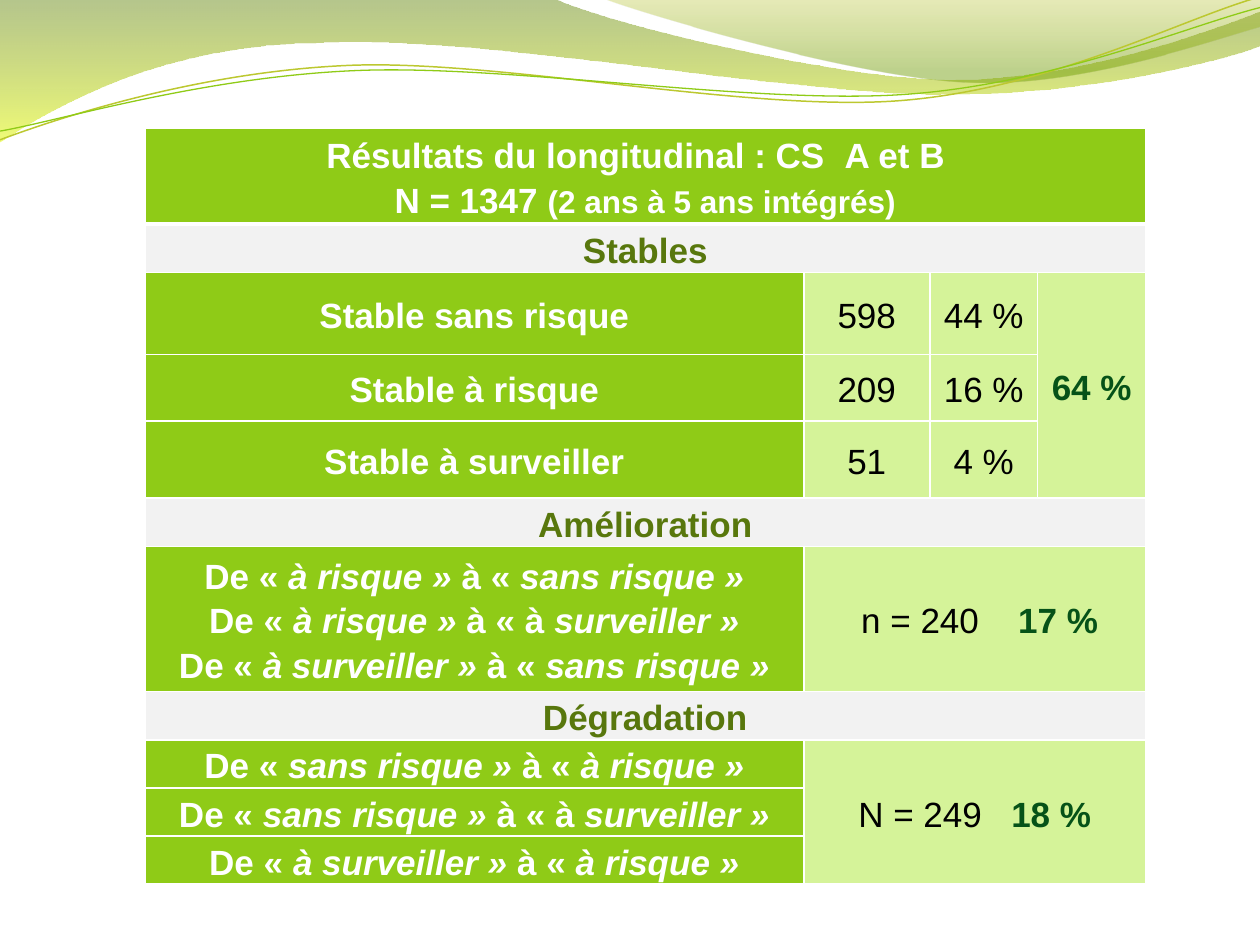
"""Build a slide with a results table under a band of green waves."""
from dataclasses import dataclass
from typing import NamedTuple

import lxml.etree
import pptx
import pptx.dml.color
import pptx.enum.text
import pptx.oxml.ns
import pptx.util

Pt = pptx.util.Pt
RGBColor = pptx.dml.color.RGBColor
qn = pptx.oxml.ns.qn

WHITE = RGBColor(0xFF, 0xFF, 0xFF)
BLACK = RGBColor(0x00, 0x00, 0x00)
GREEN = RGBColor(0x8F, 0xCB, 0x17)
PALE_GREEN = RGBColor(0xD5, 0xF3, 0x99)
DARK_GREEN = RGBColor(0x06, 0x52, 0x18)
OLIVE = RGBColor(0x58, 0x77, 0x0D)
GREY = RGBColor(0xF2, 0xF2, 0xF2)
MOSS = RGBColor(0x5C, 0x80, 0x02)
LEMON = RGBColor(0xE4, 0xF9, 0x06)
MUSTARD = RGBColor(0xAD, 0xBB, 0x15)
LEAF = RGBColor(0x6E, 0x9B, 0x00)
LIME = RGBColor(0xBC, 0xC8, 0x30)

COLUMN_WIDTHS = (376.5, 72, 61.7, 61.7)
ROW_HEIGHTS = (54.7, 27.7, 46.8, 38.2, 43.9, 27.7, 82.8, 27.7, 27.5, 27.5, 27.5)


class Stop(NamedTuple):
    color: RGBColor
    position: float
    opacity: int


@dataclass
class Wave:
    start: tuple
    segments: list
    stops: tuple = ()
    line: RGBColor | None = None
    width: float = 0


@dataclass
class Span:
    text: str
    color: RGBColor = WHITE
    size: float = 20
    bold: bool = True
    italic: bool = False
    spread: float = 0


@dataclass
class Block:
    row: int
    column: int
    lines: list
    fill: RGBColor
    rows: int = 1
    columns: int = 1


WAVES = [
    Wave((0, -0.7), [
        (316.8, -0.7),
        (342.7, 12.2, 478.1, 45.4, 545.8, 45.4),
        (614.2, 45.4, 689.8, 18.7, 720, 6.5),
        (720.7, 25.9),
        (707.8, 31.7, 626.4, 54.7, 537.1, 54),
        (447.8, 54, 275, 20.2, 185, 24.5),
        (92.9, 25.2, 33.1, 59.8, -0.7, 81.4),
        (0, -0.7),
    ], stops=(Stop(MOSS, 0, 45), Stop(LEMON, 1, 55))),
    Wave((344.9, -0.7), [
        (366.5, 7.9, 491, 44.6, 553.7, 46.8),
        (616.3, 49.7, 691.9, 23, 720, 15.1),
        (720, 0),
        (344.9, -0.7),
    ], stops=(Stop(MUSTARD, 0, 30), Stop(LEAF, 0.8, 45))),
    Wave((0, 79.9), [
        (34.6, 67, 113.8, 41, 199.4, 37.4),
        (284.4, 33.8, 427, 64.1, 513.4, 57.6),
        (599.8, 51.1, 675.4, 10.8, 718.6, -1.4),
    ], line=LIME, width=0.85),
    Wave((0, 74.9), [
        (33.8, 69.1, 115.9, 43.9, 203.8, 40.3),
        (290.2, 36.7, 429.8, 59.8, 516.2, 54),
        (601.9, 48.2, 677.5, 15.1, 720, 4.3),
    ], line=GREEN, width=0.75),
]


def heading(row: int, text: str) -> Block:
    """Describe a grey section row."""
    return Block(row, 0, [[Span(text, OLIVE)]], GREY, columns=4)


def change(before: str, link: str, after: str) -> list:
    """Describe a move from one state to another."""
    return [Span("De « "), Span(f"{before} »", italic=True),
            Span(link), Span(f"{after} »", italic=True)]


def total(row: int, count: str, share: str, spread: float, rows: int = 1) -> Block:
    """Describe a section total with its share."""
    line = [Span(count, BLACK, bold=False), Span(" ", BLACK, bold=False, spread=spread),
            Span(share, DARK_GREEN)]
    return Block(row, 1, [line], PALE_GREEN, rows, 3)


def stable(row: int, label: str, count: str, share: str) -> list:
    """Describe a label with its count and share."""
    values = [Block(row, column, [[Span(text, BLACK, bold=False)]], PALE_GREEN)
              for column, text in enumerate((count, share), 1)]
    return [Block(row, 0, [[Span(label)]], GREEN), *values]


TO, TO_A = " à « ", " à « à "
WIDE_SPACE = Span(" ", spread=5.6)
BLOCKS = [
    Block(0, 0, [[Span("Résultats du longitudinal : CS"), WIDE_SPACE, Span("A et B"),
                  WIDE_SPACE, Span("\nN = 1347 "),
                  Span("(2 ans à 5 ans intégrés)", size=18)]], GREEN, columns=4),
    heading(1, "Stables"),
    *stable(2, "Stable sans risque", "598", "44 %"),
    *stable(3, "Stable à risque", "209", "16 %"),
    *stable(4, "Stable à surveiller", "51", "4 %"),
    Block(2, 3, [[Span("64 %", DARK_GREEN)]], PALE_GREEN, rows=3),
    heading(5, "Amélioration"),
    Block(6, 0, [change("à risque", TO, "sans risque"),
                 change("à risque", TO_A, "surveiller"),
                 change("à surveiller", TO, "sans risque")], GREEN),
    total(6, " n = 240", "17 %", 16.7),
    heading(7, "Dégradation"),
    Block(8, 0, [change("sans risque", TO, "à risque")], GREEN),
    Block(9, 0, [change("sans risque", TO_A, "surveiller")], GREEN),
    Block(10, 0, [change("à surveiller", TO, "à risque")], GREEN),
    total(8, "N = 249", "18 %", 11.1, rows=3),
]


def bend(shape, segments: list) -> None:
    """Join each three points of a curved segment into one cubic curve."""
    steps = iter(list(shape._element.iter(qn("a:lnTo"))))
    for segment in segments:
        first = next(steps)
        if len(segment) == 6:
            first.tag = qn("a:cubicBezTo")
            for step in (next(steps), next(steps)):
                first.append(step[0])
                step.getparent().remove(step)


def draw_wave(page, wave: Wave) -> None:
    """Draw a gradient wave or a thin wavy line."""
    points = [(Pt(x), Pt(y)) for segment in wave.segments
              for x, y in zip(segment[::2], segment[1::2])]
    builder = page.shapes.build_freeform(*(Pt(value) for value in wave.start))
    builder.add_line_segments(points, close=bool(wave.stops))
    shape = builder.convert_to_shape()
    bend(shape, wave.segments)
    shape.shadow.inherit = False
    if not wave.stops:
        shape.fill.background()
        shape.line.color.rgb = wave.line
        shape.line.width = Pt(wave.width)
        return
    shape.line.fill.background()
    shape.fill.gradient()
    shape.fill.gradient_angle = 270
    for target, stop in zip(shape.fill.gradient_stops, wave.stops):
        target.color.rgb = stop.color
        target.position = stop.position
    for color, stop in zip(shape._element.spPr.iter(qn("a:srgbClr")), wave.stops):
        lxml.etree.SubElement(color, qn("a:alpha"), val=str(stop.opacity * 1000))


def add_borders(cell, bottom: float, top: float) -> None:
    """Give a cell white borders."""
    properties = cell._tc.get_or_add_tcPr()
    for side, width in {"L": 1, "R": 1, "T": top, "B": bottom}.items():
        line = lxml.etree.SubElement(properties, qn(f"a:ln{side}"), w=str(Pt(width)))
        fill = lxml.etree.SubElement(line, qn("a:solidFill"))
        lxml.etree.SubElement(fill, qn("a:srgbClr"), val=str(WHITE))


def write_span(para, span: Span) -> None:
    """Add one formatted span, breaking the line where it has a newline."""
    for index, text in enumerate(span.text.split("\n")):
        if index:
            para.add_line_break()
        if not text:
            continue
        run = para.add_run()
        run.text = text
        formats = {"name": "Arial", "size": Pt(span.size), "bold": span.bold,
                   "italic": span.italic}
        for name, value in formats.items():
            setattr(run.font, name, value)
        run.font.color.rgb = span.color
        if span.spread:
            run._r.get_or_add_rPr().set("spc", str(round(span.spread * 100)))


def fill_block(table, block: Block) -> None:
    """Merge, colour and write one block of the table."""
    last_row, last_column = block.row + block.rows, block.column + block.columns
    for row in range(block.row, last_row):
        for column in range(block.column, last_column):
            cell = table.cell(row, column)
            add_borders(cell, 3 if row == 0 else 1, 3 if row == 1 else 1)
            cell.fill.solid()
            cell.fill.fore_color.rgb = block.fill
    origin = table.cell(block.row, block.column)
    if block.rows * block.columns > 1:
        origin.merge(table.cell(last_row - 1, last_column - 1))
    formats = {"margin_left": Pt(3.6), "margin_right": Pt(3.6), "margin_top": Pt(0),
               "margin_bottom": Pt(0), "vertical_anchor": pptx.enum.text.MSO_ANCHOR.MIDDLE}
    for name, value in formats.items():
        setattr(origin, name, value)
    frame = origin.text_frame
    for index, line in enumerate(block.lines):
        para = frame.add_paragraph() if index else frame.paragraphs[0]
        para.alignment = pptx.enum.text.PP_ALIGN.CENTER
        para.line_spacing = 1.15
        for span in line:
            write_span(para, span)


def draw_table(page) -> None:
    """Draw the results table."""
    table = page.shapes.add_table(
        len(ROW_HEIGHTS), len(COLUMN_WIDTHS), Pt(82.8), Pt(73.3),
        Pt(sum(COLUMN_WIDTHS)), Pt(sum(ROW_HEIGHTS))).table
    table.first_row = table.horz_banding = False
    for column, width in zip(table.columns, COLUMN_WIDTHS):
        column.width = Pt(width)
    for row, height in zip(table.rows, ROW_HEIGHTS):
        row.height = Pt(height)
    for block in BLOCKS:
        fill_block(table, block)


def main() -> None:
    """Build and save the deck."""
    deck = pptx.Presentation()
    deck.slide_width, deck.slide_height = Pt(720), Pt(540)
    page = deck.slides.add_slide(deck.slide_layouts[6])
    for wave in WAVES:
        draw_wave(page, wave)
    draw_table(page)
    deck.save("out.pptx")


if __name__ == "__main__":
    main()
